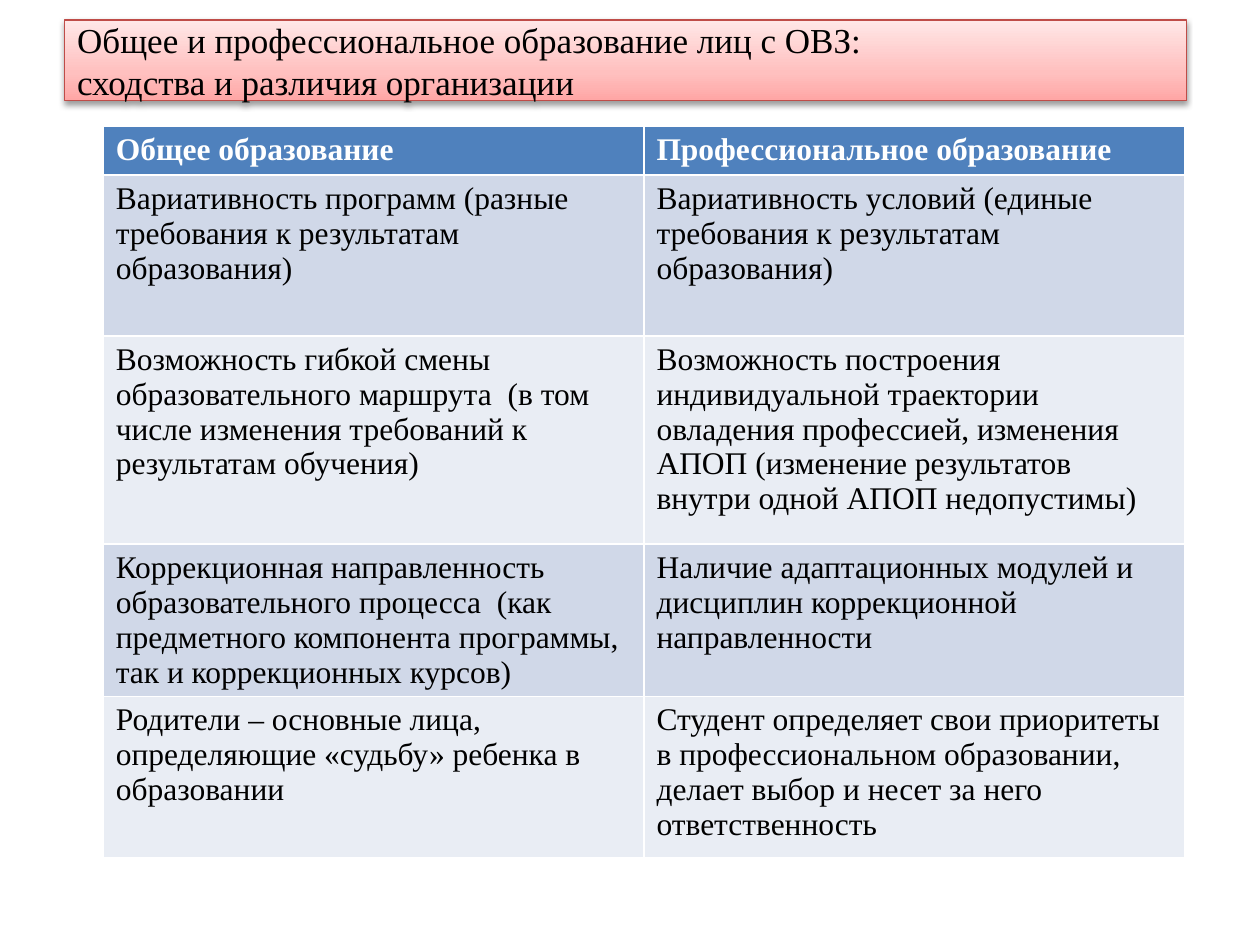
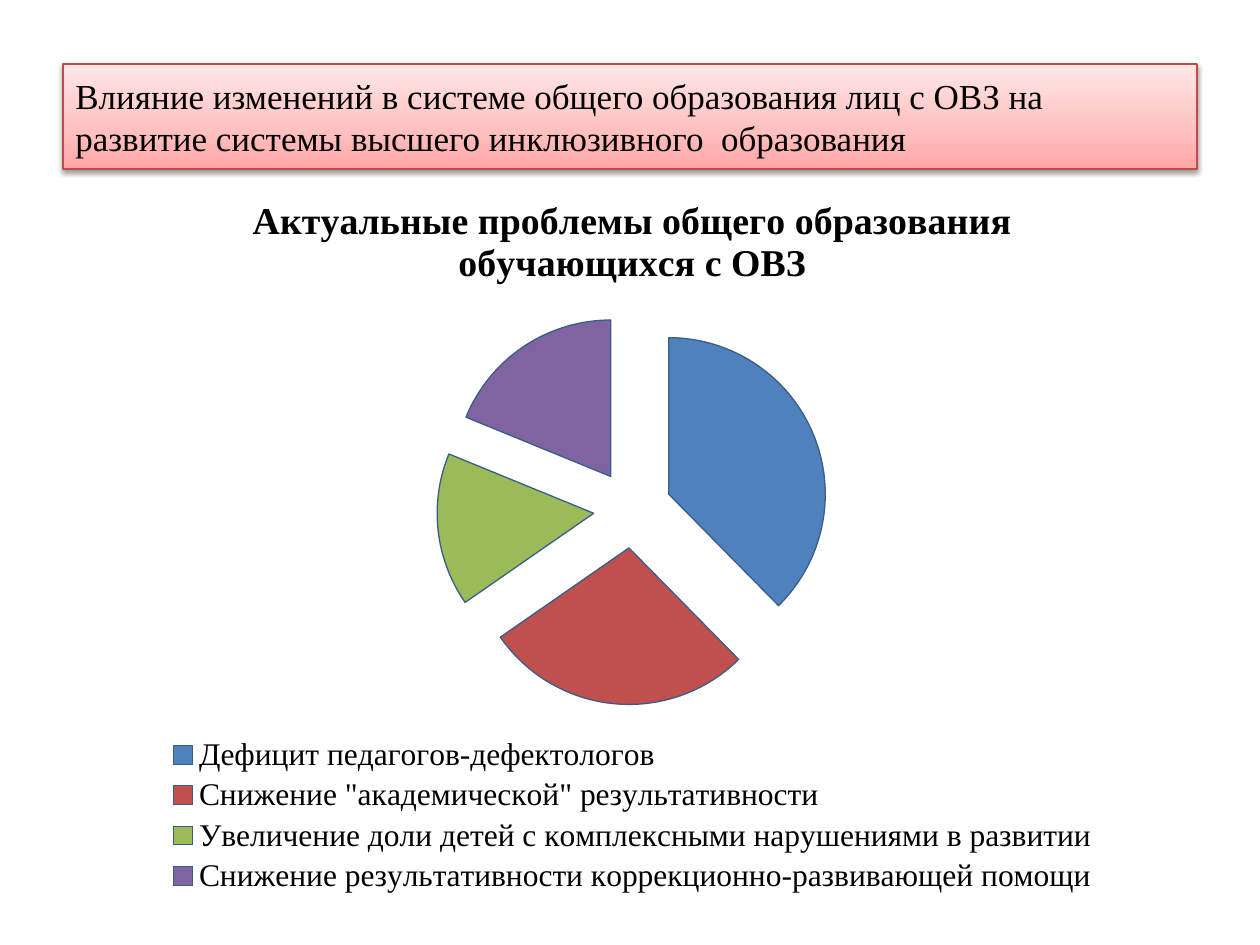
from pptx import Presentation
from pptx.chart.data import CategoryChartData
from pptx.dml.color import RGBColor
from pptx.enum.chart import XL_CHART_TYPE, XL_LEGEND_POSITION
from pptx.enum.shapes import MSO_SHAPE
from pptx.enum.text import MSO_ANCHOR, PP_ALIGN
from pptx.oxml import parse_xml
from pptx.oxml.ns import nsdecls, qn
from pptx.util import Pt

RECT = MSO_SHAPE.RECTANGLE
MIDDLE = MSO_ANCHOR.MIDDLE
LEFT = PP_ALIGN.LEFT
PIE = XL_CHART_TYPE.PIE
BOTTOM = XL_LEGEND_POSITION.BOTTOM

FACE = "Times New Roman"
BLACK = RGBColor(0x00, 0x00, 0x00)
WHITE = RGBColor(0xFF, 0xFF, 0xFF)
BLUE = RGBColor(0x4F, 0x81, 0xBD)
RED = RGBColor(0xC0, 0x50, 0x4D)
GREEN = RGBColor(0x9B, 0xBB, 0x59)
PURPLE = RGBColor(0x80, 0x64, 0xA2)
EDGE = RGBColor(0x38, 0x5D, 0x8A)
FRAME = RGBColor(0xBF, 0x4C, 0x48)
BANDS = RGBColor(0xD0, 0xD8, 0xE8), RGBColor(0xE9, 0xED, 0xF4)
STOPS = (
    (0, RGBColor(0xFF, 0xA6, 0xA5)),
    (35, RGBColor(0xFF, 0xC0, 0xBF)),
    (100, RGBColor(0xFF, 0xE7, 0xE7)),
)

ROWS = (
    ("Общее образование", "Профессиональное образование"),
    ("Вариативность программ (разные требования к результатам образования)",
     "Вариативность условий (единые требования к результатам образования)"),
    ("Возможность гибкой смены образовательного маршрута  (в том числе "
     "изменения требований к результатам обучения)",
     "Возможность построения индивидуальной траектории овладения профессией, "
     "изменения АПОП (изменение результатов внутри одной АПОП недопустимы)"),
    ("Коррекционная направленность образовательного процесса  (как предметного "
     "компонента программы, так и коррекционных курсов)",
     "Наличие адаптационных модулей и дисциплин коррекционной направленности"),
    ("Родители – основные лица, определяющие «судьбу» ребенка в образовании",
     "Студент определяет свои приоритеты в профессиональном образовании, "
     "делает выбор и несет за него ответственность"),
)
HEIGHTS = 28, 92, 119, 81, 92

ISSUES = (
    ("Дефицит педагогов-дефектологов", 38, BLUE),
    ('Снижение "академической" результативности', 28, RED),
    ("Увеличение доли детей с комплексными нарушениями в развитии", 16, GREEN),
    ("Снижение результативности коррекционно-развивающей помощи", 19, PURPLE),
)


def style(font, size, color=BLACK, bold=False):
    """Set face, size, colour and weight of a font."""
    font.name = FACE
    font.size = Pt(size)
    font.color.rgb = color
    font.bold = bold


def add_blend(shape):
    """Fill a shape with the pink blend and give it a soft shadow."""
    stops = "".join(
        f'<a:gs pos="{pos * 1000}"><a:srgbClr val="{color}"/></a:gs>'
        for pos, color in STOPS)
    props = shape._element.spPr
    props.insert(2, parse_xml(
        f'<a:gradFill {nsdecls("a")}><a:gsLst>{stops}</a:gsLst>'
        '<a:lin ang="16200000" scaled="1"/></a:gradFill>'))
    shape.shadow.inherit = False
    props.find(qn("a:effectLst")).append(parse_xml(
        f'<a:outerShdw {nsdecls("a")} blurRad="{Pt(3.1)}" dist="{Pt(1.6)}" '
        'dir="5400000" rotWithShape="0"><a:srgbClr val="000000">'
        '<a:alpha val="38000"/></a:srgbClr></a:outerShdw>'))


def add_title(slide, text, left, top, width, height):
    """Add the title band."""
    band = slide.shapes.add_shape(
        RECT, Pt(left), Pt(top), Pt(width), Pt(height))
    add_blend(band)
    band.line.color.rgb = FRAME
    band.line.width = Pt(0.75)
    frame = band.text_frame
    frame.word_wrap = True
    frame.vertical_anchor = MIDDLE
    frame.text = text
    para = frame.paragraphs[0]
    para.alignment = LEFT
    style(para.font, 20)


def add_grid(slide, left, top, width):
    """Add the table that compares both kinds of education."""
    table = slide.shapes.add_table(
        len(ROWS), len(ROWS[0]), Pt(left), Pt(top),
        Pt(width), Pt(sum(HEIGHTS))).table
    for i, (texts, height) in enumerate(zip(ROWS, HEIGHTS)):
        table.rows[i].height = Pt(height)
        head = i == 0
        for j, text in enumerate(texts):
            cell = table.cell(i, j)
            cell.text = text
            cell.fill.solid()
            cell.fill.fore_color.rgb = BLUE if head else BANDS[(i - 1) % 2]
            style(cell.text_frame.paragraphs[0].font, 18,
                  WHITE if head else BLACK, head)


def add_pie(slide, title, left, top, width, height):
    """Add the exploded pie of issues with its title and legend."""
    data = CategoryChartData()
    data.categories = [name for name, _, _ in ISSUES]
    data.add_series("Series 1", [value for _, value, _ in ISSUES])
    chart = slide.shapes.add_chart(
        PIE, Pt(left), Pt(top), Pt(width), Pt(height), data).chart
    style(chart.font, 18)
    chart.has_title = True
    chart.chart_title.include_in_layout = False
    frame = chart.chart_title.text_frame
    frame.text = title
    style(frame.paragraphs[0].font, 21.6, bold=True)
    chart.has_legend = True
    chart.legend.position = BOTTOM
    chart.legend.include_in_layout = False
    style(chart.legend.font, 18)
    plot = chart.plots[0]
    plot.vary_by_categories = True
    series = plot.series[0]
    for i, (_, _, color) in enumerate(ISSUES):
        form = series.points[i].format
        form.fill.solid()
        form.fill.fore_color.rgb = color
        form.line.color.rgb = EDGE
        form.line.width = Pt(0.75)
    series._element.find(qn("c:dPt")).addprevious(
        parse_xml(f'<c:explosion {nsdecls("c")} val="25"/>'))


def main():
    """Build and save both slides."""
    deck = Presentation()
    deck.slide_width, deck.slide_height = Pt(720), Pt(540)
    blank = deck.slide_layouts[6]

    slide = deck.slides.add_slide(blank)
    add_title(slide, "Общее и профессиональное образование лиц с ОВЗ:\v"
              "сходства и различия организации", 37, 11.5, 641, 46)
    add_grid(slide, 59, 72, 618)

    slide = deck.slides.add_slide(blank)
    add_title(slide, "Влияние изменений в системе общего образования лиц с ОВЗ "
              "на развитие системы высшего инклюзивного  образования",
              36, 36.5, 648, 60)
    add_pie(slide, "Актуальные проблемы общего образования обучающихся с ОВЗ",
            60.5, 96, 602, 418)

    deck.save("out.pptx")


if __name__ == "__main__":
    main()
